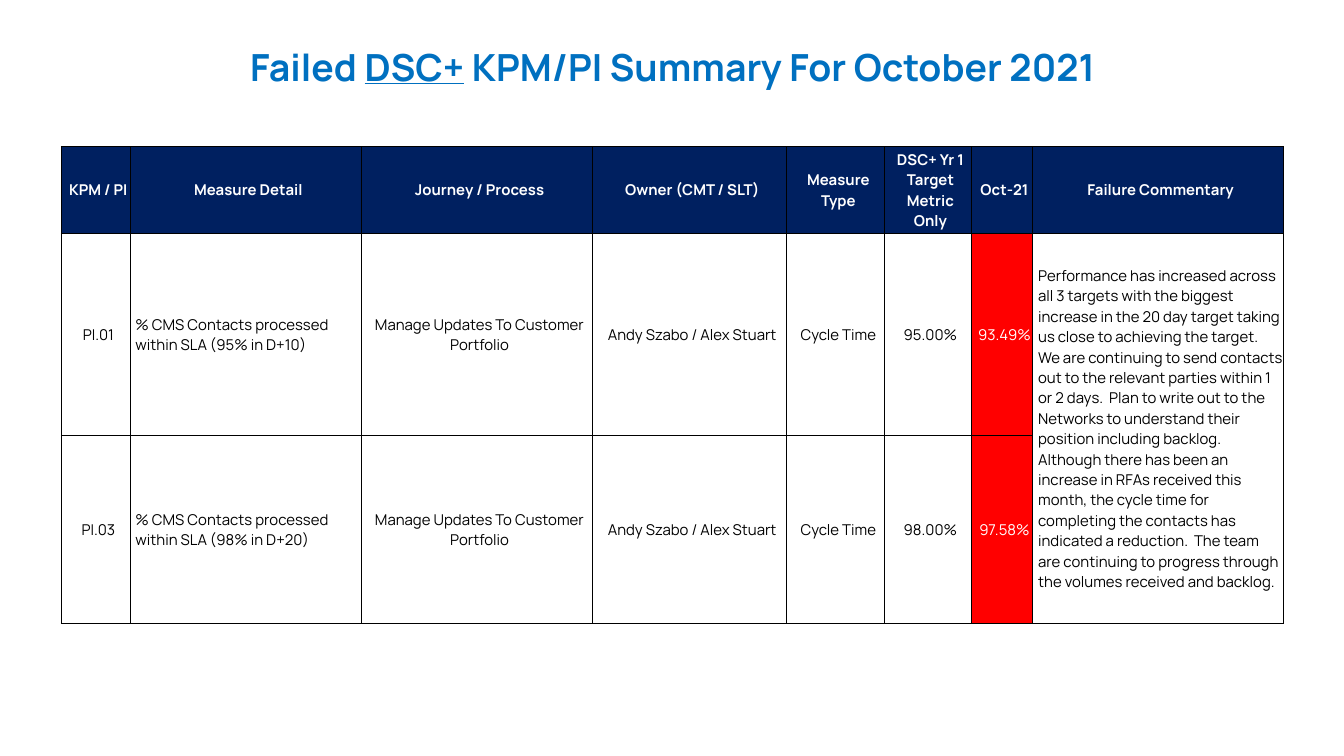
from dataclasses import dataclass
from typing import Optional

from lxml import etree
from pptx import Presentation
from pptx import util as u
from pptx.dml.color import RGBColor
from pptx.enum import text
from pptx.oxml import ns

BLUE = RGBColor(0x00, 0x70, 0xC0)
NAVY = RGBColor(0x00, 0x20, 0x60)
RED = RGBColor(0xFF, 0x00, 0x00)
WHITE = RGBColor(0xFF, 0xFF, 0xFF)
BLACK = RGBColor(0x00, 0x00, 0x00)
FONT = "Manrope"


@dataclass
class Column:
    head: str
    width: float
    left: bool = False
    fill: Optional[RGBColor] = None
    ink: RGBColor = BLACK


COLS = [
    Column("KPM / PI", 1.3),
    Column("Measure Detail", 4.37, left=True),
    Column("Journey / Process", 4.37),
    Column("Owner (CMT / SLT)", 3.67),
    Column("Measure Type", 1.85),
    Column("DSC+ Yr 1 Target Metric Only", 1.63),
    Column("Oct-21", 1.17, fill=RED, ink=WHITE),
    Column("Failure Commentary", 4.73, left=True),
]
HEIGHTS = [1.65, 3.81, 3.56]
NOTE = (
    "Performance has increased across all 3 targets with the biggest increase "
    "in the 20 day target taking us close to achieving the target.  We are "
    "continuing to send contacts out to the relevant parties within 1 or 2 days.  "
    "Plan to write out to the Networks to understand their position including "
    "backlog.  Although there has been an increase in RFAs received this month, "
    "the cycle time for completing the contacts has indicated a reduction.  The "
    "team are continuing to progress through the volumes received and backlog."
)


def measure(code: str, share: str, days: str, target: str, score: str,
            note: str = "") -> list[str]:
    """Return the cell texts of one failed measure."""
    return [code, f"% CMS Contacts processed within SLA ({share} in {days})",
            "Manage Updates To Customer Portfolio", "Andy Szabo / Alex Stuart",
            "Cycle Time", target, score, note]


ROWS = [
    measure("PI.01", "95%", "D+10", "95.00%", "93.49%", NOTE),
    measure("PI.03", "98%", "D+20", "98.00%", "97.58%"),
]


def write(para, words: str, *, size: float = 8, ink: RGBColor = BLACK,
          bold: bool = False, line: bool = False, left: bool = False) -> None:
    """Add one run to a paragraph and align the paragraph."""
    para.alignment = text.PP_ALIGN.LEFT if left else text.PP_ALIGN.CENTER
    run = para.add_run()
    run.text = words
    font = run.font
    font.name, font.size, font.bold = FONT, u.Pt(size), bold
    font.underline = line
    font.color.rgb = ink


def border(cell) -> None:
    """Draw a thin black line on all four sides."""
    props = cell._tc.get_or_add_tcPr()
    for side in ("lnL", "lnR", "lnT", "lnB"):
        edge = etree.SubElement(props, ns.qn(f"a:{side}"), w=str(u.Pt(0.5)))
        fill = etree.SubElement(edge, ns.qn("a:solidFill"))
        etree.SubElement(fill, ns.qn("a:srgbClr"), val=str(BLACK))


def dress(cell, fill: Optional[RGBColor]) -> None:
    """Set the margins, borders and fill of a cell."""
    cell.margin_left = u.Cm(0.1)
    cell.margin_right = cell.margin_top = cell.margin_bottom = 0
    cell.vertical_anchor = text.MSO_ANCHOR.MIDDLE
    border(cell)
    if fill is None:
        cell.fill.background()
    else:
        cell.fill.solid()
        cell.fill.fore_color.rgb = fill


def add_title(slide) -> None:
    box = slide.shapes.add_textbox(u.Cm(0.03), u.Cm(0.71), u.Cm(25.37), u.Cm(1.11))
    frame = box.text_frame
    frame.word_wrap = True
    frame.auto_size = text.MSO_AUTO_SIZE.SHAPE_TO_FIT_TEXT
    for words, line in (("Failed ", False), ("DSC+", True),
                        (" KPM/PI Summary For October 2021", False)):
        write(frame.paragraphs[0], words, size=20, ink=BLUE, bold=True, line=line)


def add_grid(slide) -> None:
    width = sum(col.width for col in COLS)
    grid = slide.shapes.add_table(
        len(HEIGHTS), len(COLS), u.Cm(1.16), u.Cm(2.77),
        u.Cm(width), u.Cm(sum(HEIGHTS))).table
    grid.first_row = grid.horz_banding = False
    for row, height in zip(grid.rows, HEIGHTS):
        row.height = u.Cm(height)
    for x, col in enumerate(COLS):
        grid.columns[x].width = u.Cm(col.width)
        head = grid.cell(0, x)
        dress(head, NAVY)
        write(head.text_frame.paragraphs[0], col.head, ink=WHITE, bold=True)
        for y, row in enumerate(ROWS, 1):
            cell = grid.cell(y, x)
            dress(cell, col.fill)
            if row[x]:
                write(cell.text_frame.paragraphs[0], row[x], ink=col.ink,
                      left=col.left)
    last = len(COLS) - 1
    grid.cell(1, last).merge(grid.cell(len(ROWS), last))


def main() -> None:
    deck = Presentation()
    deck.slide_width, deck.slide_height = u.Cm(25.4), u.Cm(14.29)
    slide = deck.slides.add_slide(deck.slide_layouts[6])
    add_title(slide)
    add_grid(slide)
    deck.save("out.pptx")


if __name__ == "__main__":
    main()
